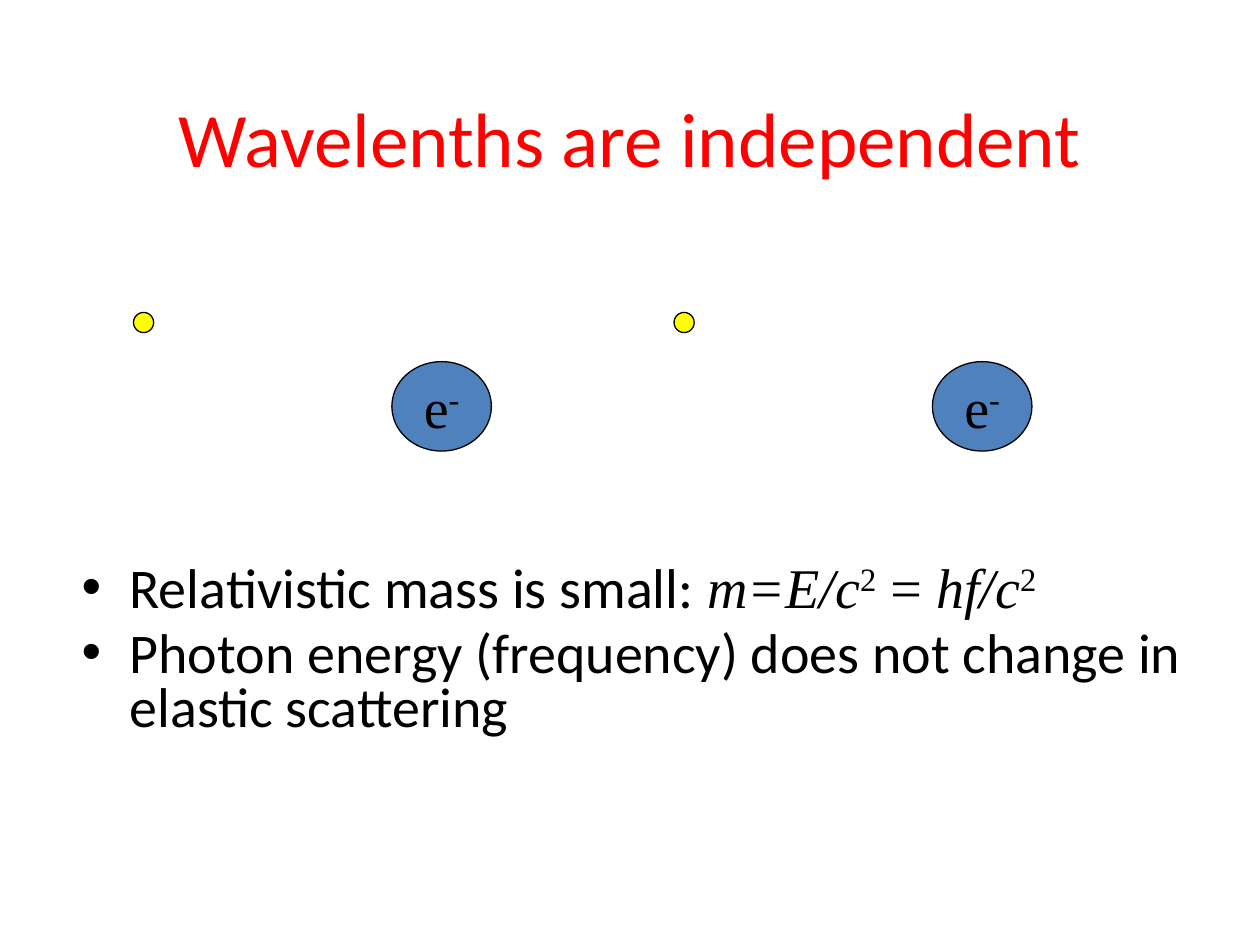
"""Build a slide on photon wavelengths in elastic scattering."""
from lxml import etree
from pptx import Presentation, util as u
from pptx.dml.color import RGBColor
from pptx.enum import shapes, text
from pptx.oxml.ns import qn

HUES = {"title": "FF0000", "ink": "000000", "ball": "4F81BD", "photon": "FEFE00"}
SANS, SERIF = "Calibri", "Times New Roman"


def add_runs(para, parts):
    para.font.size = u.Pt(32)
    para.font.color.rgb = RGBColor.from_string(HUES["ink"])
    for words, face, style in parts:
        run = para.add_run()
        run.text, run.font.name = words, face
        run.font.italic = style == "italic"
        if style == "super":
            run.font._element.set("baseline", "30000")


def add_oval(left, top, wide, high, hue):
    oval = slide.shapes.add_shape(
        shapes.MSO_SHAPE.OVAL, *map(u.Inches, (left, top, wide, high)))
    oval.shadow.inherit = False
    oval.fill.solid()
    oval.fill.fore_color.rgb = RGBColor.from_string(HUES[hue])
    oval.line.color.rgb = RGBColor.from_string(HUES["ink"])
    oval.line.width = u.Pt(0.75)
    return oval


deck = Presentation()
deck.slide_width, deck.slide_height = u.Inches(10), u.Inches(7.5)
slide = deck.slides.add_slide(deck.slide_layouts[5])

title = slide.shapes.title
title.left, title.top = 0, u.Inches(0.46)
title.width, title.height = deck.slide_width, u.Inches(1.25)
title.text_frame.text = "Wavelenths are independent"
title.text_frame.vertical_anchor = text.MSO_ANCHOR.MIDDLE
head = title.text_frame.paragraphs[0]
head.alignment = text.PP_ALIGN.CENTER
head.font.size, head.font.name = u.Pt(44), SANS
head.font.color.rgb = RGBColor.from_string(HUES["title"])

points = [
    [("Relativistic mass is small: ", SANS, ""), ("m=E/c", SERIF, "italic"),
     ("2", SERIF, "super"), (" = ", SERIF, ""), ("hf/c", SERIF, "italic"),
     ("2", SERIF, "super")],
    [("Photon energy (frequency) does not change in elastic scattering", SANS, "")],
]
body = slide.shapes.add_textbox(*map(u.Inches, (0.55, 4.44, 9.02, 2.4))).text_frame
body.word_wrap = True
for row, parts in enumerate(points):
    para = body.add_paragraph() if row else body.paragraphs[0]
    para.line_spacing = 0.8
    para.space_before = u.Pt(6.4 * row)
    props = para._p.get_or_add_pPr()
    props.set("marL", str(u.Inches(0.38)))
    props.set("indent", str(-u.Inches(0.38)))
    etree.SubElement(props, qn("a:buFont"), typeface="Arial")
    etree.SubElement(props, qn("a:buChar"), char="•")
    add_runs(para, parts)

for left in (1.06, 5.35):
    ball = add_oval(left + 2.05, 2.87, 0.79, 0.71, "ball").text_frame
    ball.word_wrap = False
    ball.vertical_anchor = text.MSO_ANCHOR.MIDDLE
    ball.paragraphs[0].alignment = text.PP_ALIGN.CENTER
    add_runs(ball.paragraphs[0], [("e", SERIF, ""), ("-", SERIF, "super")])
    add_oval(left, 2.48, 0.16, 0.16, "photon")

deck.save("out.pptx")
